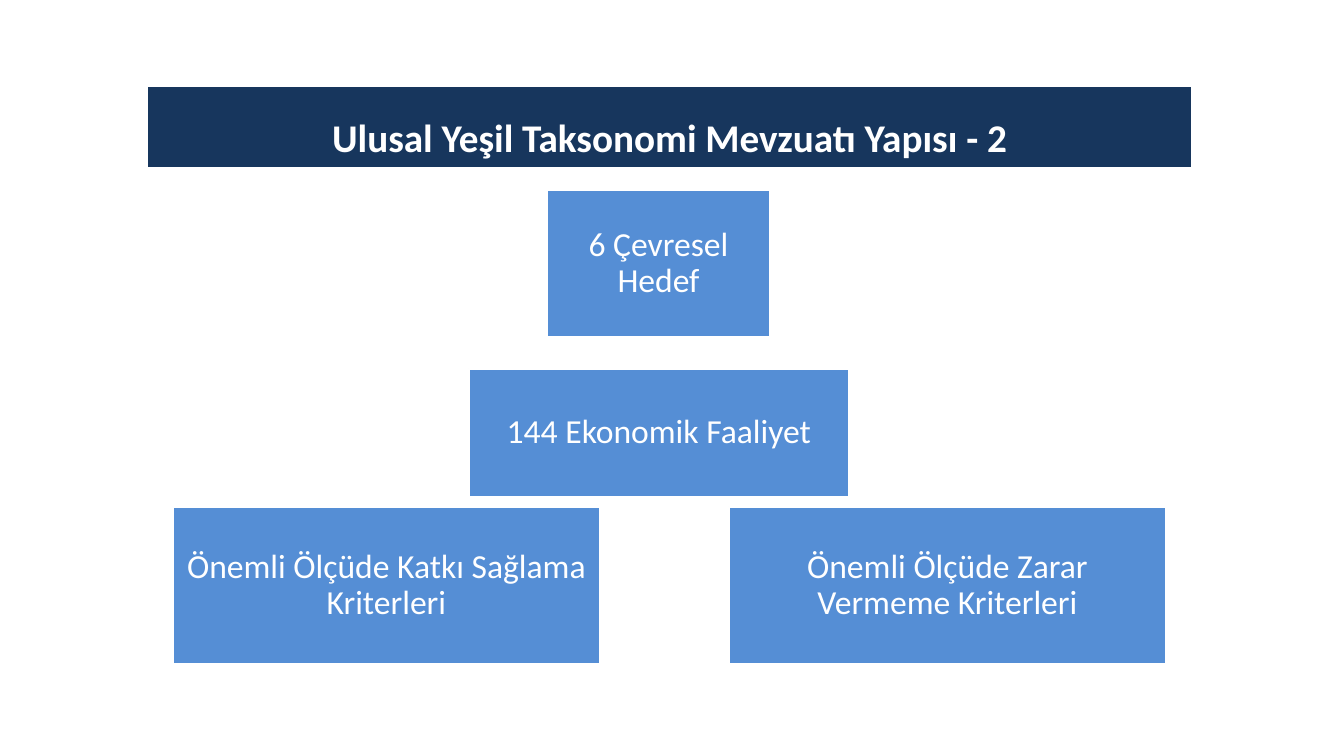
from pptx import Presentation
from pptx.dml.color import RGBColor
from pptx.enum.shapes import MSO_SHAPE as Shape
from pptx.enum.text import MSO_ANCHOR as Anchor, PP_ALIGN as Align
from pptx.util import Emu, Pt

NAVY = RGBColor(0x17, 0x36, 0x5D)
BLUE = RGBColor(0x55, 0x8E, 0xD5)
WHITE = RGBColor(0xFF, 0xFF, 0xFF)
FONT = "Calibri"

BOXES = [
    ("6 Çevresel Hedef", 547, 190, 223, 147),
    ("144 Ekonomik Faaliyet", 469, 369, 380, 128),
    ("Önemli Ölçüde Katkı Sağlama Kriterleri", 173, 507, 427, 157),
    ("Önemli Ölçüde Zarar Vermeme Kriterleri", 729, 507, 437, 157),
]


def px(*vals):
    """Turn pixel lengths into EMU, at 100.8 pixels to the inch."""
    return [Emu(round(val * 914400 / 100.8)) for val in vals]


def write(frame, text, size=24, bold=False, space=0.9):
    para = frame.paragraphs[0]
    para.alignment = Align.CENTER
    para.line_spacing = space
    run = para.add_run()
    run.text = text
    run.font.name = FONT
    run.font.size = Pt(size)
    run.font.bold = bold
    run.font.color.rgb = WHITE


def paint(item, color):
    item.fill.solid()
    item.fill.fore_color.rgb = color


def banner(slide, text):
    """Add the heading table: a navy row above an empty white one."""
    table = slide.shapes.add_table(2, 1, *px(147, 86, 1045, 137)).table
    for row, high, color in zip(table.rows, px(81, 56), (NAVY, WHITE)):
        row.height = high
        paint(row.cells[0], color)
    write(table.cell(0, 0).text_frame, text, size=28, bold=True, space=1.5)


def box(slide, text, *place):
    shape = slide.shapes.add_shape(Shape.RECTANGLE, *px(*place))
    shape.shadow.inherit = False
    paint(shape, BLUE)
    shape.line.color.rgb = WHITE
    shape.line.width = Pt(1)
    frame = shape.text_frame
    frame.word_wrap = True
    frame.vertical_anchor = Anchor.MIDDLE
    inset, = px(9)
    frame.margin_left = frame.margin_right = inset
    frame.margin_top = frame.margin_bottom = inset
    write(frame, text)


def main():
    deck = Presentation()
    deck.slide_width, deck.slide_height = px(1344, 756)
    slide = deck.slides.add_slide(deck.slide_layouts[6])
    banner(slide, "Ulusal Yeşil Taksonomi Mevzuatı Yapısı - 2")
    for text, *place in BOXES:
        box(slide, text, *place)
    deck.save("out.pptx")


if __name__ == "__main__":
    main()
